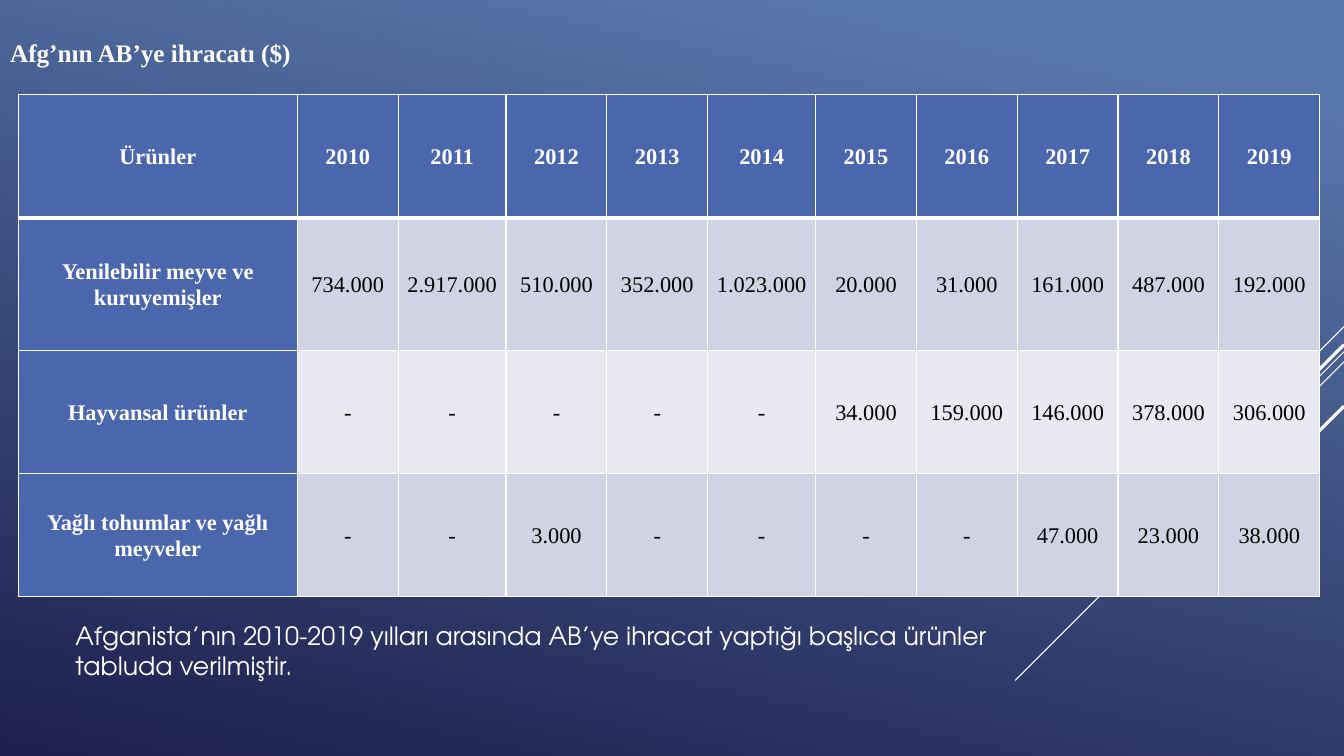
from lxml.etree import SubElement
from pptx import Presentation
from pptx.dml.color import RGBColor
from pptx.enum.shapes import MSO_CONNECTOR
from pptx.enum.text import MSO_ANCHOR, MSO_AUTO_SIZE, PP_ALIGN
from pptx.oxml import parse_xml
from pptx.oxml.ns import nsdecls, qn
from pptx.util import Inches, Pt

COLORS = {
    "white": "FFFFFF", "black": "000000", "head": "4A66AC",
    "odd": "D0D3E3", "even": "E9EAF1", "sky": "5877AB", "night": "1C204D",
}
SERIF = "Times New Roman"
SANS = "TeX Gyre Adventor"

ROWS = [
    ["Ürünler", *map(str, range(2010, 2020))],
    ["Yenilebilir meyve ve kuruyemişler", "734.000", "2.917.000", "510.000",
     "352.000", "1.023.000", "20.000", "31.000", "161.000", "487.000", "192.000"],
    ["Hayvansal ürünler", "-", "-", "-", "-", "-",
     "34.000", "159.000", "146.000", "378.000", "306.000"],
    ["Yağlı tohumlar ve yağlı meyveler", "-", "-", "3.000", "-", "-", "-", "-",
     "47.000", "23.000", "38.000"],
]
WIDTHS = [2.77, 1, 1.07, 1, 1, 1.07, 1, 1, 1, 1, 1]
HEIGHTS = [1.22, 1.32, 1.22, 1.22]

# Diagonal rays from the right edge: start y, run, weight
EDGE = 13.33
RAYS = [(3.24, 1, 0.75), (3.49, 3.26, 0.75), (3.59, 2.07, 0.75),
        (3.42, 1.91, 2.25), (4.03, 1.39, 2.25)]


def color(name):
    return RGBColor.from_string(COLORS[name])


def set_font(par, face, size, name="white", bold=False):
    font = par.font
    font.name, font.size, font.bold = face, Pt(size), bold
    font.color.rgb = color(name)


def paint_back(slide):
    fill = slide.background.fill
    fill.gradient()
    fill.gradient_angle = 360 - 102
    for stop, name, pos in zip(fill.gradient_stops, ("sky", "night"), (0.1, 1)):
        stop.color.rgb = color(name)
        stop.position = pos


def add_ray(slide, top, run, weight):
    ray = slide.shapes.add_connector(
        MSO_CONNECTOR.STRAIGHT, Inches(EDGE), Inches(top),
        Inches(EDGE - run), Inches(top + run))
    ray.line.color.rgb = color("white")
    ray.line.width = Pt(weight)
    SubElement(ray._element.spPr, qn("a:effectLst"))


def fill_text(shape, text, left, top, width, height):
    shape.left, shape.top = Inches(left), Inches(top)
    shape.width, shape.height = Inches(width), Inches(height)
    frame = shape.text_frame
    frame.text = text
    frame.word_wrap = True
    frame.auto_size = MSO_AUTO_SIZE.NONE
    frame.vertical_anchor = MSO_ANCHOR.TOP
    par = frame.paragraphs[0]
    par.alignment = PP_ALIGN.LEFT
    return par


def add_edges(cell, top, bottom):
    props = cell._tc.get_or_add_tcPr()
    edges = [("L", 1), ("R", 1), ("T", top), ("B", bottom)]
    for spot, (side, weight) in enumerate(edges):
        props.insert(spot, parse_xml(
            f'<a:ln{side} {nsdecls("a")} w="{Pt(weight)}"><a:solidFill>'
            f'<a:srgbClr val="{COLORS["white"]}"/></a:solidFill></a:ln{side}>'))


def style_cell(cell, text, row, col):
    head = row == 0 or col == 0
    cell.text = text
    cell.vertical_anchor = MSO_ANCHOR.MIDDLE
    cell.margin_left = cell.margin_right = Inches(0.07)
    cell.margin_top = cell.margin_bottom = 0
    cell.fill.solid()
    cell.fill.fore_color.rgb = color("head" if head else "odd" if row % 2 else "even")
    par = cell.text_frame.paragraphs[0]
    par.alignment = PP_ALIGN.CENTER
    par.line_spacing = 1.07
    set_font(par, SERIF, 16, "white" if head else "black", head)
    add_edges(cell, 3 if row == 1 else 1, 3 if row == 0 else 1)


def add_grid(slide):
    table = slide.shapes.add_table(
        len(ROWS), len(WIDTHS), Inches(0.18), Inches(0.94),
        Inches(sum(WIDTHS)), Inches(sum(HEIGHTS))).table
    for column, width in zip(table.columns, WIDTHS):
        column.width = Inches(width)
    for line, height in zip(table.rows, HEIGHTS):
        line.height = Inches(height)
    for row, texts in enumerate(ROWS):
        for col, text in enumerate(texts):
            style_cell(table.cell(row, col), text, row, col)


def main():
    deck = Presentation()
    deck.slide_width, deck.slide_height = Inches(EDGE), Inches(7.5)
    slide = deck.slides.add_slide(deck.slide_layouts[5])
    paint_back(slide)
    for ray in RAYS:
        add_ray(slide, *ray)

    # Title
    par = fill_text(slide.shapes.title, "Afg’nın AB’ye ihracatı ($)", 0, 0.3, 3.05, 0.41)
    par.line_spacing = 1.07
    par.space_after = Pt(8)
    set_font(par, SERIF, 18, bold=True)

    # Export table
    add_grid(slide)

    # Caption
    box = slide.shapes.add_textbox(0, 0, 0, 0)
    par = fill_text(
        box, "Afganista’nın 2010-2019 yılları arasında AB’ye ihracat yaptığı "
        "başlıca ürünler tabluda verilmiştir.", 0.65, 6.1, 9.49, 0.71)
    set_font(par, SANS, 18)

    deck.save("out.pptx")


if __name__ == "__main__":
    main()
